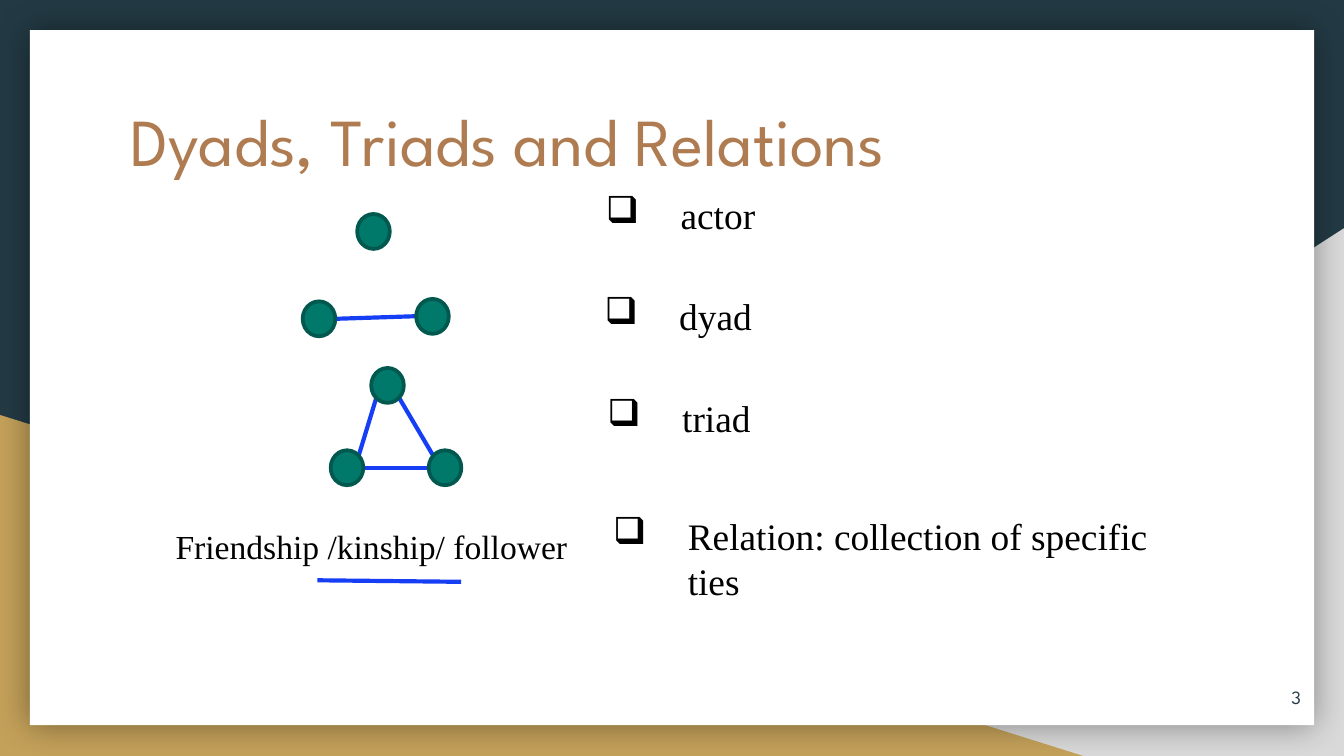
"""Build the slide on dyads, triads and relations."""
from dataclasses import dataclass

from lxml import etree
from pptx import Presentation
from pptx.dml.color import RGBColor
from pptx.enum.shapes import MSO_CONNECTOR, MSO_SHAPE
from pptx.enum.text import MSO_ANCHOR, MSO_AUTO_SIZE, PP_ALIGN
from pptx.oxml import parse_xml
from pptx.oxml.ns import nsdecls, qn
from pptx.util import Pt

TRIANGLE, RECT, OVAL = MSO_SHAPE.RIGHT_TRIANGLE, MSO_SHAPE.RECTANGLE, MSO_SHAPE.OVAL
STRAIGHT = MSO_CONNECTOR.STRAIGHT
TOP, MIDDLE = MSO_ANCHOR.TOP, MSO_ANCHOR.MIDDLE
LEFT, RIGHT = PP_ALIGN.LEFT, PP_ALIGN.RIGHT
NO_FIT = MSO_AUTO_SIZE.NONE


@dataclass(frozen=True)
class Theme:
    navy: str = "233A44"
    grey: str = "D9D9D9"
    gold: str = "C4A15A"
    white: str = "FFFFFF"
    copper: str = "AF7B51"
    black: str = "000000"
    node: str = "00796B"
    node_edge: str = "00584E"
    tie: str = "163EF5"
    heading: str = "League Spartan"
    body: str = "Times New Roman"
    title_size: int = 36
    term_size: int = 20
    caption_size: int = 18
    number_size: int = 10


theme = Theme()


def add_filled(kind, x, y, w, h, color):
    sp = s.shapes.add_shape(kind, Pt(x), Pt(y), Pt(w), Pt(h))
    sp.shadow.inherit = False
    sp.fill.solid()
    sp.fill.fore_color.rgb = RGBColor.from_string(color)
    sp.line.fill.background()
    return sp


def set_text(sp, text, font, size, color, pad=3.6, align=LEFT, anchor=TOP):
    tf = sp.text_frame
    tf.text = text
    tf.word_wrap = True
    tf.auto_size = NO_FIT
    tf.vertical_anchor = anchor
    tf.margin_left = tf.margin_right = Pt(7.2)
    tf.margin_top = tf.margin_bottom = Pt(pad)
    p = tf.paragraphs[0]
    p.alignment = align
    r = p.runs[0]
    r.font.name, r.font.size = font, Pt(size)
    r.font.color.rgb = RGBColor.from_string(color)
    return p


prs = Presentation()
prs.slide_width, prs.slide_height = Pt(720), Pt(405)
s = prs.slides.add_slide(prs.slide_layouts[5])
s.background.fill.solid()
s.background.fill.fore_color.rgb = RGBColor.from_string(theme.navy)

corner = add_filled(TRIANGLE, 282, 122.3, 438, 282.7, theme.grey)
corner._element.spPr.find(qn("a:xfrm")).set("flipH", "1")
add_filled(TRIANGLE, 0, 222.3, 580.3, 182.7, theme.gold)
page = add_filled(RECT, 16, 16.2, 688, 372.3, theme.white)
page._element.spPr.find(qn("a:effectLst")).append(parse_xml(
    f'<a:outerShdw {nsdecls("a")} blurRad="{Pt(18)}" dist="0" algn="ctr" rotWithShape="0">'
    f'<a:srgbClr val="{theme.black}"><a:alpha val="40000"/></a:srgbClr></a:outerShdw>'))

title = s.shapes.title
s.shapes._spTree.append(title._element)
title.left, title.top, title.width, title.height = Pt(62.6), Pt(46.1), Pt(501), Pt(49.7)
set_text(title, "Dyads, Triads and Relations", theme.heading, theme.title_size,
         theme.copper, pad=7.2)

number = s.shapes.add_textbox(Pt(661), Pt(357.8), Pt(43), Pt(31))
set_text(number, "3", theme.heading, theme.number_size, theme.navy, 7.2, RIGHT, MIDDLE)

ties = [
    (180, 170.8, 223, 169.4),
    (213.8, 213.1, 232, 244),
    (201.6, 213.1, 192.2, 244),
    (194.6, 250.6, 229.7, 250.6),
    (170, 310.9, 247, 311.7),
]
for x1, y1, x2, y2 in ties:
    tie = s.shapes.add_connector(STRAIGHT, Pt(x1), Pt(y1), Pt(x2), Pt(y2))
    tie.line.color.rgb = RGBColor.from_string(theme.tie)
    tie.line.width = Pt(2.25)
    etree.SubElement(tie._element.spPr, qn("a:effectLst"))

node_w, node_h = 17.5, 18.7
actor = [(200.1, 124)]
dyad = [(170.9, 170.8), (231.7, 169.5)]
triad = [(207.6, 206.5), (185.9, 250.6), (238.4, 250.6)]
for cx, cy in actor + dyad + triad:
    node = add_filled(OVAL, cx - node_w / 2, cy - node_h / 2, node_w, node_h, theme.node)
    node.line.color.rgb = RGBColor.from_string(theme.node_edge)
    node.line.width = Pt(2)

terms = [
    ("actor", 317.5, 99.4, 96, 31.5),
    ("dyad", 316.8, 153.5, 95, 31.5),
    ("triad", 318.4, 208, 92, 31.5),
    ("Relation: collection of specific ties", 321.4, 271.4, 319, 55.7),
]
for text, x, y, w, h in terms:
    term = s.shapes.add_textbox(Pt(x), Pt(y), Pt(w), Pt(h))
    p = set_text(term, text, theme.body, theme.term_size, theme.black)
    pPr = p._p.get_or_add_pPr()
    pPr.set("marL", str(Pt(40)))
    pPr.set("indent", str(Pt(-40)))
    color = etree.SubElement(pPr, qn("a:buClr"))
    etree.SubElement(color, qn("a:srgbClr"), val=theme.black)
    etree.SubElement(pPr, qn("a:buChar"), char="❑")

caption = s.shapes.add_textbox(Pt(87), Pt(278), Pt(227), Pt(29))
set_text(caption, "Friendship /kinship/ follower", theme.body, theme.caption_size, theme.black)

prs.save("out.pptx")
